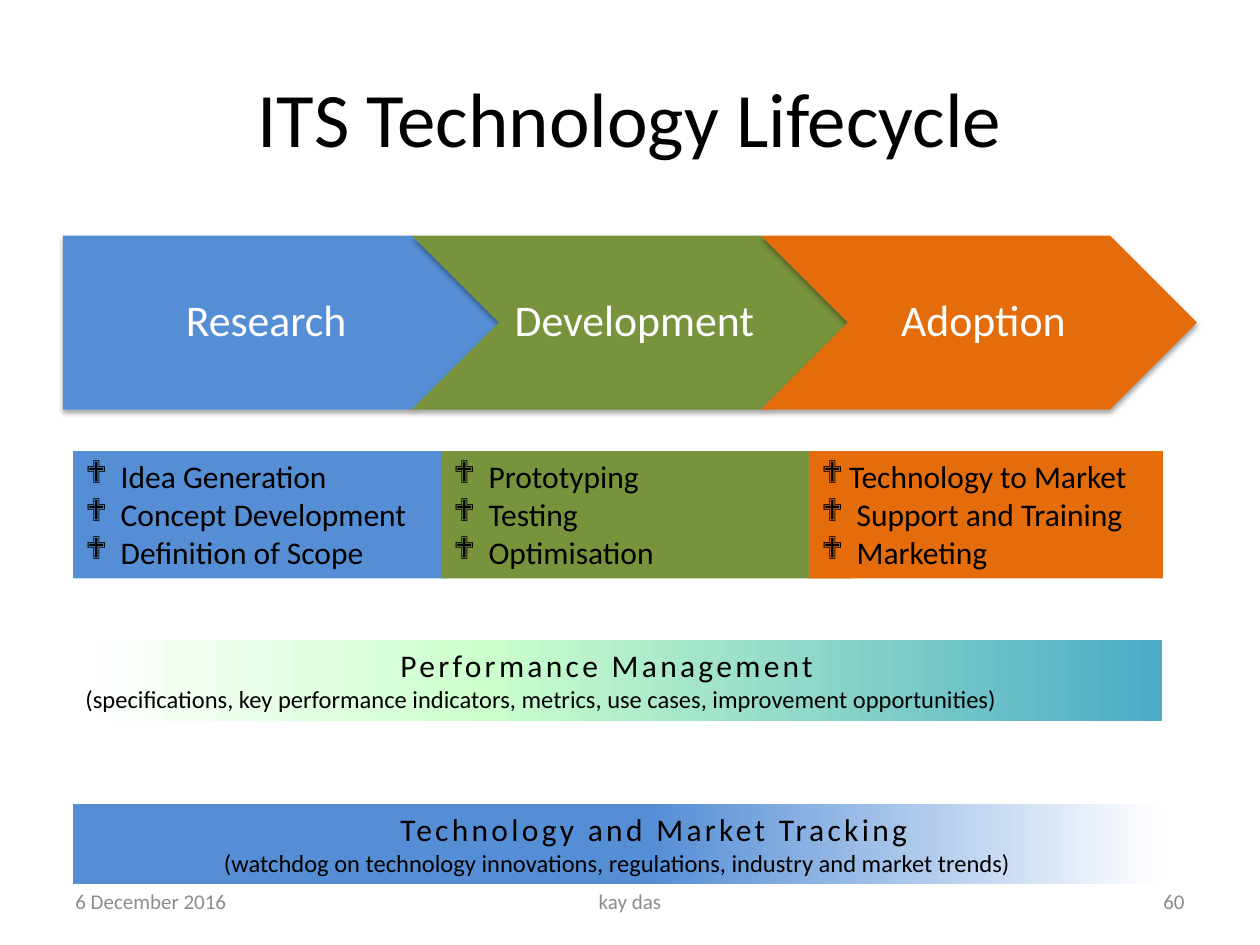
import pptx
import pptx.dml.color
import pptx.enum.shapes
import pptx.enum.text
import pptx.oxml.ns
import pptx.util
from lxml import etree

Inches = pptx.util.Inches
Pt = pptx.util.Pt
SHAPE = pptx.enum.shapes.MSO_SHAPE
ALIGN = pptx.enum.text.PP_ALIGN
MIDDLE = pptx.enum.text.MSO_ANCHOR.MIDDLE
qn = pptx.oxml.ns.qn

FONT = "Calibri"
COLORS = {
    "research": "558ED5", "development": "77933C", "adoption": "E46C0A",
    "mint": "CCFFCC", "teal": "4BACC6", "white": "FFFFFF",
    "black": "000000", "footer": "8C8C8C",
}


def rgb(name):
    return pptx.dml.color.RGBColor.from_string(COLORS[name])


def add_run(paragraph, text, size, color="black", spacing=0):
    run = paragraph.add_run()
    run.text = text
    run.font.name = FONT
    run.font.size = Pt(size)
    run.font.color.rgb = rgb(color)
    if spacing:
        run.font._element.set("spc", str(round(spacing * 100)))


def add_label(slide, box, text, size, color="black", align=ALIGN.LEFT):
    label = slide.shapes.add_textbox(*map(Inches, box))
    frame = label.text_frame
    frame.word_wrap = True
    frame.vertical_anchor = MIDDLE
    frame.paragraphs[0].alignment = align
    add_run(frame.paragraphs[0], text, size, color)


def add_block(slide, kind, box, fill=None):
    block = slide.shapes.add_shape(kind, *map(Inches, box))
    block.shadow.inherit = False
    block.line.fill.background()
    if fill:
        block.fill.solid()
        block.fill.fore_color.rgb = rgb(fill)
    block.text_frame.word_wrap = True
    block.text_frame.vertical_anchor = pptx.enum.text.MSO_ANCHOR.TOP
    return block


def add_soft_shadow(shape):
    effects = shape._element.spPr.find(qn("a:effectLst"))
    shadow = etree.SubElement(effects, qn("a:outerShdw"), blurRad=str(Pt(3.1)),
                              dist=str(Pt(1.8)), dir="5400000", rotWithShape="0")
    color = etree.SubElement(shadow, qn("a:srgbClr"), val=COLORS["black"])
    etree.SubElement(color, qn("a:alpha"), val="35000")


def set_gradient(shape, stops):
    shape.fill.gradient()
    shape.fill.gradient_angle = 0
    stop_list = next(shape._element.spPr.iter(qn("a:gsLst")))
    for old_stop in list(stop_list):
        stop_list.remove(old_stop)
    for percent, name in stops:
        stop = etree.SubElement(stop_list, qn("a:gs"), pos=str(percent * 1000))
        etree.SubElement(stop, qn("a:srgbClr"), val=COLORS[name])


def add_phases(slide, box, phases):
    """Interlocking arrows; each point reaches into the next arrow's notch."""
    left, top, width, height = box
    point = height / 2
    step = (width - point) / len(phases)
    for index, (text, fill) in enumerate(phases):
        kind = SHAPE.CHEVRON if index else SHAPE.PENTAGON
        phase = add_block(slide, kind, (left + index * step, top, step + point, height), fill)
        add_soft_shadow(phase)
        frame = phase.text_frame
        frame.word_wrap = False
        frame.vertical_anchor = MIDDLE
        frame.margin_left = Inches(0.11 if index else 0.15)
        frame.margin_right = Inches(0.04)
        frame.paragraphs[0].alignment = ALIGN.CENTER
        frame.paragraphs[0].line_spacing = 0.9
        add_run(frame.paragraphs[0], text, 25, "white")


def add_activities(slide, box, fill, activities):
    """Bulleted list of (text, indent) items on a coloured panel."""
    frame = add_block(slide, SHAPE.RECTANGLE, box, fill).text_frame
    for index, (text, indent) in enumerate(activities):
        paragraph = frame.add_paragraph() if index else frame.paragraphs[0]
        paragraph.alignment = ALIGN.LEFT
        properties = paragraph._p.get_or_add_pPr()
        properties.set("marL", str(Inches(indent)))
        properties.set("indent", str(-Inches(indent)))
        etree.SubElement(properties, qn("a:buFont"), typeface="Wingdings")
        etree.SubElement(properties, qn("a:buChar"), char="❖")
        add_run(paragraph, text, 18)


def add_support_bar(slide, box, stops, heading, detail, detail_align):
    bar = add_block(slide, SHAPE.RECTANGLE, box)
    set_gradient(bar, stops)
    heading_line = bar.text_frame.paragraphs[0]
    heading_line.alignment = ALIGN.LEFT
    heading_line._p.get_or_add_pPr().set("marL", str(Inches(2.5)))
    add_run(heading_line, heading, 18, spacing=1.9)
    detail_line = bar.text_frame.add_paragraph()
    detail_line.alignment = detail_align
    add_run(detail_line, detail, 14)


def add_footer(slide, box, date, author, number):
    left, top, width, height = box
    side, middle = 2.33, 3.17
    parts = [
        (left, side, date, ALIGN.LEFT),
        (left + (width - middle) / 2, middle, author, ALIGN.CENTER),
        (left + width - side, side, number, ALIGN.RIGHT),
    ]
    for part_left, part_width, text, align in parts:
        add_label(slide, (part_left, top, part_width, height), text, 12, "footer", align)


def main():
    deck = pptx.Presentation()
    deck.slide_width, deck.slide_height = Inches(10), Inches(7.5)
    slide = deck.slides.add_slide(deck.slide_layouts[6])

    # Title
    add_label(slide, (0.5, 0.3, 9, 1.25), "ITS Technology Lifecycle", 44, align=ALIGN.CENTER)

    # Lifecycle phases
    add_phases(slide, (0.5, 1.87, 9, 1.38), [
        ("Research", "research"), ("Development", "development"), ("Adoption", "adoption")])

    # Activities in each phase
    panels = [
        (0.58, 2.98, "research", [
            ("Idea Generation", 0.28), ("Concept Development", 0.28),
            ("Definition of Scope", 0.28)]),
        (3.5, 3.25, "development", [
            ("Prototyping", 0.28), ("Testing", 0.28), ("Optimisation", 0.28)]),
        (6.42, 2.81, "adoption", [
            ("Technology to Market", 0.22), ("Support and Training", 0.28),
            ("Marketing", 0.28)]),
    ]
    for left, width, fill, activities in panels:
        add_activities(slide, (left, 3.58, width, 1.01), fill, activities)

    # Supporting activities across all phases
    add_support_bar(
        slide, (0.58, 5.08, 8.64, 0.64), [(1, "white"), (38, "mint"), (100, "teal")],
        "Performance Management",
        "(specifications, key performance indicators, metrics, use cases, "
        "improvement opportunities)", ALIGN.LEFT)
    add_support_bar(
        slide, (0.58, 6.38, 8.64, 0.64), [(53, "research"), (100, "white")],
        "Technology and Market Tracking",
        "(watchdog on technology innovations, regulations, industry and market trends)",
        ALIGN.CENTER)

    # Footer
    add_footer(slide, (0.5, 6.95, 9, 0.4), "6 December 2016", "kay das", "60")

    deck.save("out.pptx")


if __name__ == "__main__":
    main()
